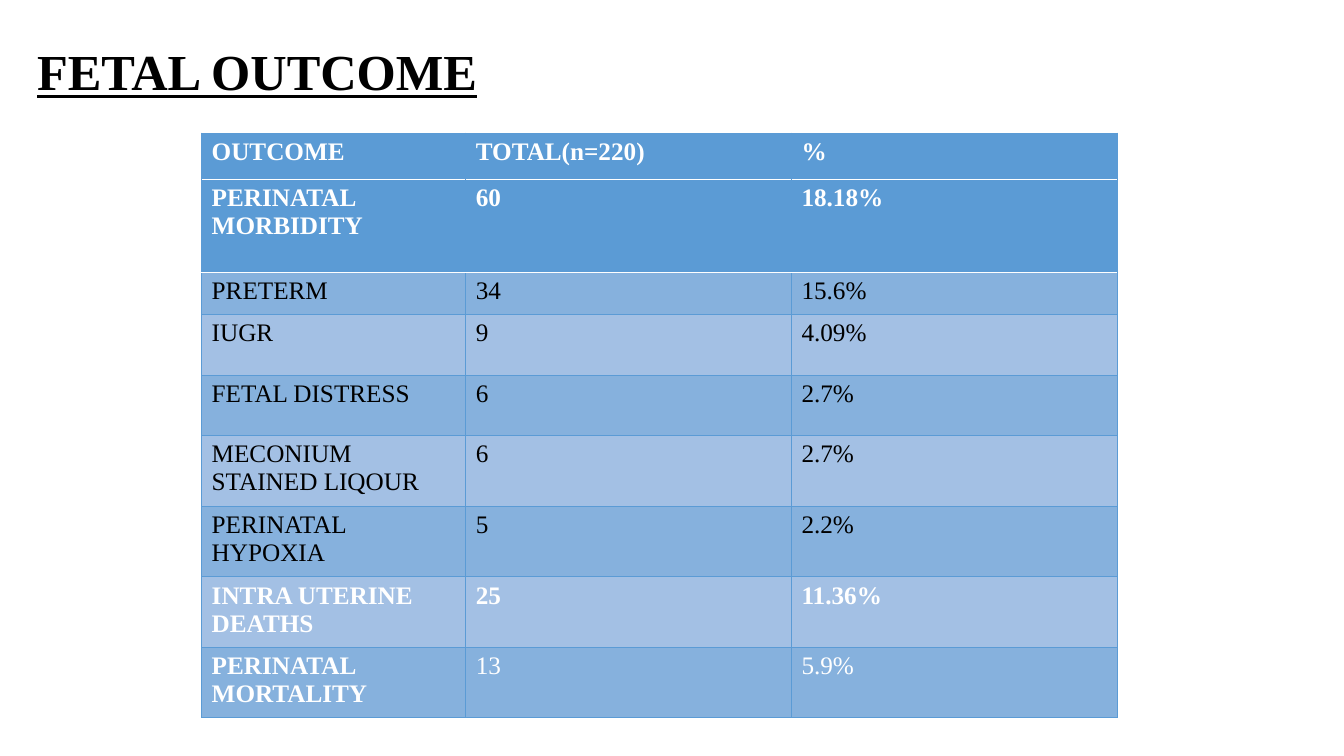
from dataclasses import dataclass

from lxml.etree import SubElement
from pptx import Presentation
from pptx.dml.color import RGBColor
from pptx.enum.text import MSO_ANCHOR
from pptx.oxml.ns import qn
from pptx.util import Inches, Pt


@dataclass(frozen=True)
class Theme:
    font: str = "Times New Roman"
    title_size: int = 36
    table_size: int = 18
    black: str = "000000"
    white: str = "FFFFFF"
    blue: str = "5B9BD5"
    dark_band: str = "86B1DD"
    light_band: str = "A3C0E4"


@dataclass(frozen=True)
class Row:
    height: float
    texts: tuple
    fill: str
    color: str = Theme.black
    bold_columns: int = 0
    bottom: str = Theme.blue


THEME = Theme()
TABLE_LEFT = 2
HEADER_TOP = 1.32
HEADER_HEIGHT = 0.46
COLUMN_WIDTHS = (2.62, 3.23, 3.23)


def heading_row(height, *texts):
    return Row(height, texts, THEME.blue, THEME.white, 3, THEME.white)


HEADER_ROWS = [heading_row(HEADER_HEIGHT, "OUTCOME", "TOTAL(n=220)", "%")]
OUTCOME_ROWS = [
    heading_row(0.92, "PERINATAL MORBIDITY", "60", "18.18%"),
    Row(0.42, ("PRETERM", "34", "15.6%"), THEME.dark_band),
    Row(0.6, ("IUGR", "9", "4.09%"), THEME.light_band),
    Row(0.6, ("FETAL DISTRESS", "6", "2.7%"), THEME.dark_band),
    Row(0.65, ("MECONIUM STAINED LIQOUR", "6", "2.7%"), THEME.light_band),
    Row(0.65, ("PERINATAL HYPOXIA", "5", "2.2%"), THEME.dark_band),
    Row(0.65, ("INTRA UTERINE DEATHS", "25", "11.36%"), THEME.light_band, THEME.white, 3),
    Row(0.65, ("PERINATAL MORTALITY", "13", "5.9%"), THEME.dark_band, THEME.white, 1),
]


def style_text(text_frame, size, color, bold, underline=False):
    for paragraph in text_frame.paragraphs:
        for run in paragraph.runs:
            run.font.name = THEME.font
            run.font.size = Pt(size)
            run.font.color.rgb = RGBColor.from_string(color)
            run.font.bold = bold
            run.font.underline = underline


def add_title(slide, text):
    shape = slide.shapes.add_textbox(Inches(0.27), Inches(0.41), Inches(10), Inches(0.65))
    text_frame = shape.text_frame
    text_frame.word_wrap = True
    text_frame.vertical_anchor = MSO_ANCHOR.BOTTOM
    text_frame.text = text
    text_frame.paragraphs[0].line_spacing = 0.9
    style_text(text_frame, THEME.title_size, THEME.black, True, True)


def set_border(cell, side, color, width):
    line = SubElement(cell._tc.get_or_add_tcPr(), qn(f"a:ln{side}"), w=str(Pt(width)))
    fill = SubElement(line, qn("a:solidFill"))
    SubElement(fill, qn("a:srgbClr"), val=color)


def format_cell(cell, text, row, top, bold):
    cell.text_frame.text = text
    style_text(cell.text_frame, THEME.table_size, row.color, bold)
    for side, color in zip("LRTB", (THEME.blue, THEME.blue, top, row.bottom)):
        set_border(cell, side, color, 1 if color == THEME.white else 0.5)
    cell.fill.solid()
    cell.fill.fore_color.rgb = RGBColor.from_string(row.fill)


def add_outcome_table(slide, top, rows):
    height = sum(row.height for row in rows)
    table = slide.shapes.add_table(
        len(rows), len(COLUMN_WIDTHS), Inches(TABLE_LEFT), Inches(top),
        Inches(sum(COLUMN_WIDTHS)), Inches(height)).table
    table.first_row = False
    table.horz_banding = False
    for column, width in zip(table.columns, COLUMN_WIDTHS):
        column.width = Inches(width)
    top_border = THEME.blue
    for row_index, row in enumerate(rows):
        table.rows[row_index].height = Inches(row.height)
        for column_index, text in enumerate(row.texts):
            format_cell(table.cell(row_index, column_index), text, row,
                        top_border, column_index < row.bold_columns)
        top_border = row.bottom


def main():
    presentation = Presentation()
    presentation.slide_width = Inches(13.33)
    presentation.slide_height = Inches(7.5)
    slide = presentation.slides.add_slide(presentation.slide_layouts[6])
    add_title(slide, "FETAL OUTCOME")
    add_outcome_table(slide, HEADER_TOP + HEADER_HEIGHT, OUTCOME_ROWS)
    add_outcome_table(slide, HEADER_TOP, HEADER_ROWS)
    presentation.save("out.pptx")


if __name__ == "__main__":
    main()
